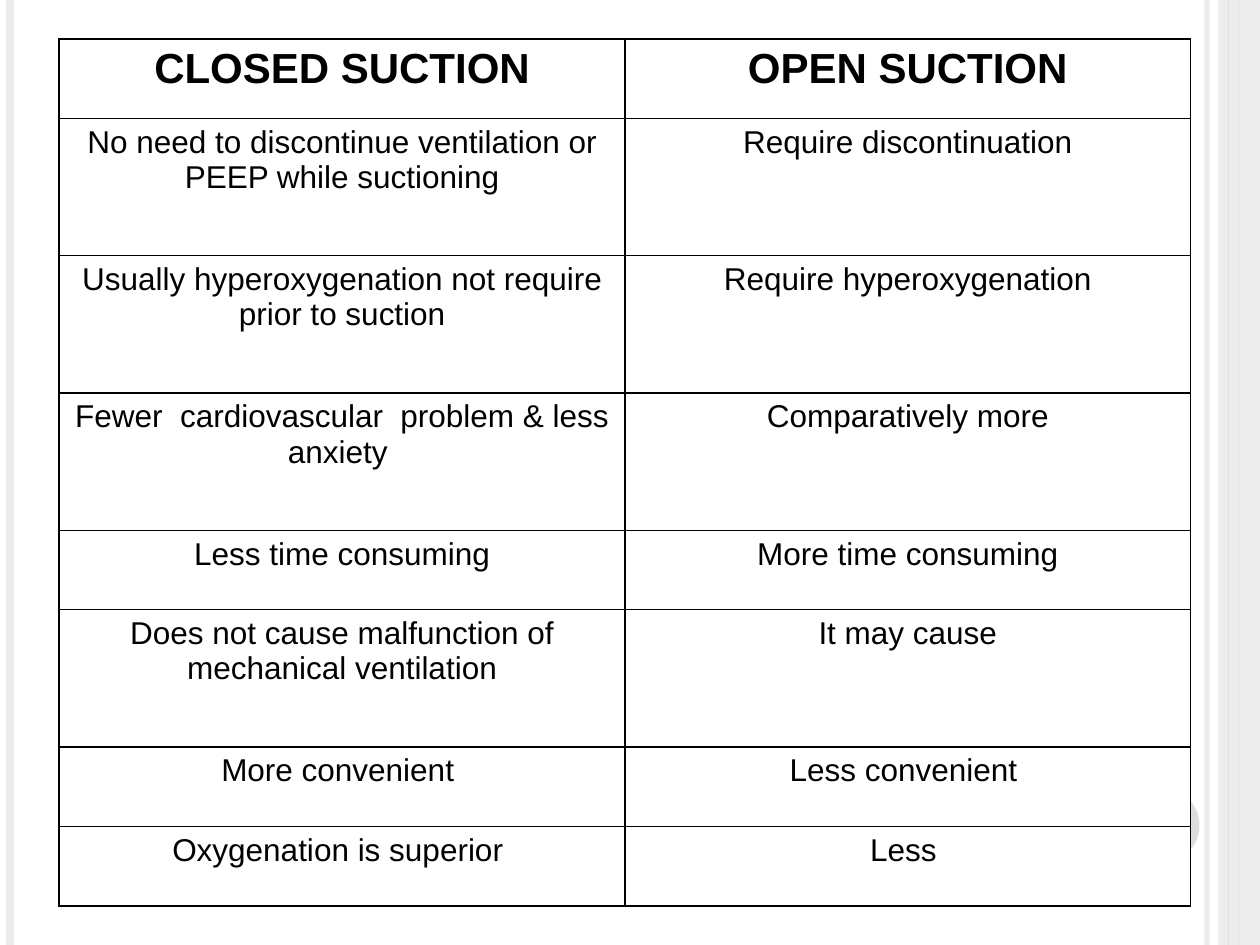
from dataclasses import dataclass

from lxml.etree import SubElement
from pptx import Presentation
from pptx.dml.color import RGBColor
from pptx.enum.shapes import MSO_CONNECTOR, MSO_SHAPE
from pptx.enum.text import PP_ALIGN
from pptx.oxml.ns import qn
from pptx.util import Inches, Pt

COLORS = {"white": "FFFFFF", "black": "000000", "pale": "EBEBEB", "gray": "DDDDDD"}
FONT = "Arial"
WIDTH, HEIGHT = 10, 7.5
TABLE_LEFT, TABLE_TOP, COL_WIDTH = 0.47, 0.31, 4.49
SHORT_ROW, TALL_ROW = 0.63, 1.09


@dataclass
class Rule:
    x: float
    color: str
    weight: float
    opacity: int = 100


@dataclass
class Panel:
    kind: MSO_SHAPE
    left: float
    top: float
    width: float
    height: float
    color: str
    opacity: int = 100


@dataclass
class Row:
    closed: str
    opened: str
    height: float = SHORT_ROW
    size: int = 18
    bold: bool = False


BACK_RULES = [Rule(9.58, "pale", 3, 93), Rule(0.08, "pale", 4.5), Rule(9.83, "gray", 1.5)]
SIDEBAR = Panel(MSO_SHAPE.RECTANGLE, 9.67, 0, 0.33, HEIGHT, "pale", 87)
FRONT_RULE = Rule(9.75, "gray", 0.75)
DISC = Panel(MSO_SHAPE.OVAL, 8.92, 6.25, 0.6, 0.6, "gray")

ROWS = [
    Row("CLOSED SUCTION", "OPEN SUCTION", size=24, bold=True),
    Row("No need to discontinue ventilation or PEEP while suctioning",
        "Require discontinuation", TALL_ROW),
    Row("Usually hyperoxygenation not require prior to suction",
        "Require hyperoxygenation", TALL_ROW),
    Row("Fewer  cardiovascular  problem & less anxiety ", "Comparatively more", TALL_ROW),
    Row("Less time consuming", "More time consuming"),
    Row("Does not cause malfunction of mechanical ventilation", "It may cause", TALL_ROW),
    Row("More convenient ", "Less convenient "),
    Row("Oxygenation is superior ", "Less "),
]


def rgb(name: str) -> RGBColor:
    return RGBColor.from_string(COLORS[name])


def set_opacity(element, percent: int) -> None:
    if percent < 100:
        color = next(element.iter(qn("a:srgbClr")))
        SubElement(color, qn("a:alpha"), val=str(percent * 1000))


def add_rule(s, rule: Rule) -> None:
    x = Inches(rule.x)
    line = s.shapes.add_connector(MSO_CONNECTOR.STRAIGHT, x, 0, x, Inches(HEIGHT))
    line.line.color.rgb = rgb(rule.color)
    line.line.width = Pt(rule.weight)
    sp_pr = line._element.spPr
    set_opacity(sp_pr, rule.opacity)
    SubElement(sp_pr, qn("a:effectLst"))


def add_panel(s, panel: Panel) -> None:
    box = (Inches(v) for v in (panel.left, panel.top, panel.width, panel.height))
    sp = s.shapes.add_shape(panel.kind, *box)
    sp.shadow.inherit = False
    sp.fill.solid()
    sp.fill.fore_color.rgb = rgb(panel.color)
    sp.line.fill.background()
    set_opacity(sp._element.spPr, panel.opacity)


def add_borders(cell) -> None:
    tc_pr = cell._tc.get_or_add_tcPr()
    for i, side in enumerate(("lnL", "lnR", "lnT", "lnB")):
        ln = tc_pr.makeelement(qn(f"a:{side}"), {"w": str(Pt(1))})
        fill = SubElement(ln, qn("a:solidFill"))
        SubElement(fill, qn("a:srgbClr"), val=COLORS["black"])
        tc_pr.insert(i, ln)


def fill_cell(cell, text: str, row: Row) -> None:
    cell.fill.solid()
    cell.fill.fore_color.rgb = rgb("white")
    add_borders(cell)
    cell.text_frame.text = text
    p = cell.text_frame.paragraphs[0]
    p.alignment = PP_ALIGN.CENTER
    r = p.runs[0]
    r.font.name = FONT
    r.font.size = Pt(row.size)
    r.font.bold = row.bold
    r.font.color.rgb = rgb("black")


def add_comparison(s, rows: list[Row]) -> None:
    height = sum(row.height for row in rows)
    table = s.shapes.add_table(len(rows), 2, Inches(TABLE_LEFT), Inches(TABLE_TOP),
                               Inches(2 * COL_WIDTH), Inches(height)).table
    for col in table.columns:
        col.width = Inches(COL_WIDTH)
    for i, row in enumerate(rows):
        table.rows[i].height = Inches(row.height)
        for j, text in enumerate((row.closed, row.opened)):
            fill_cell(table.cell(i, j), text, row)


def main() -> None:
    """Build the slide comparing closed and open suction."""
    prs = Presentation()
    prs.slide_width, prs.slide_height = Inches(WIDTH), Inches(HEIGHT)
    s = prs.slides.add_slide(prs.slide_layouts[6])
    s.background.fill.solid()
    s.background.fill.fore_color.rgb = rgb("white")
    for rule in BACK_RULES:
        add_rule(s, rule)
    add_panel(s, SIDEBAR)
    add_rule(s, FRONT_RULE)
    add_panel(s, DISC)
    add_comparison(s, ROWS)
    prs.save("out.pptx")


if __name__ == "__main__":
    main()
